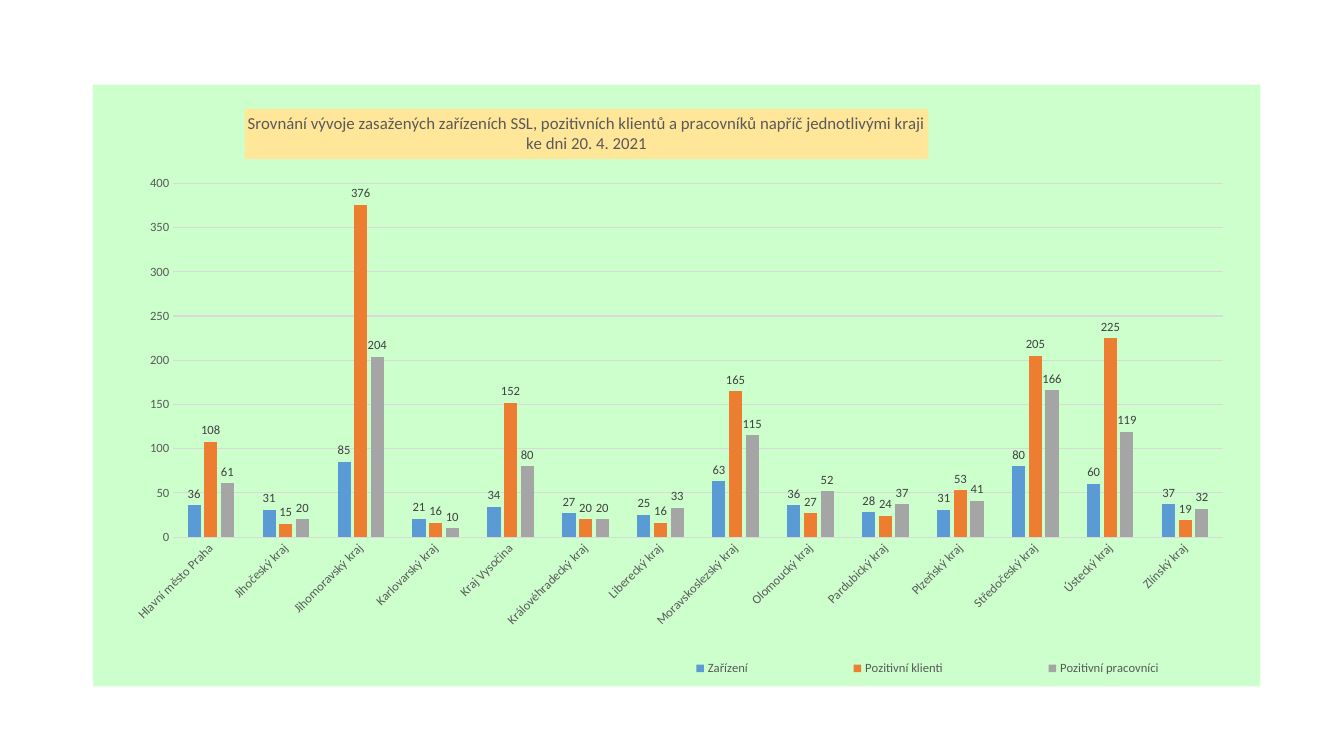
"""Build a slide with a column chart comparing affected care facilities by region."""
from lxml import etree
from pptx import Presentation
from pptx.chart.data import CategoryChartData
from pptx.dml.color import RGBColor
from pptx.enum.chart import (XL_CHART_TYPE, XL_LABEL_POSITION,
                             XL_LEGEND_POSITION, XL_TICK_MARK)
from pptx.enum.text import PP_ALIGN
from pptx.oxml import parse_xml
from pptx.oxml.ns import nsdecls, qn
from pptx.util import Inches, Pt

TITLE_LINES = [
    "Srovnání vývoje zasažených zařízeních SSL, pozitivních klientů a pracovníků napříč jednotlivými kraji",
    "ke dni 20. 4. 2021",
]
REGIONS = [
    ("Hlavní město Praha", 36, 108, 61),
    ("Jihočeský kraj", 31, 15, 20),
    ("Jihomoravský kraj", 85, 376, 204),
    ("Karlovarský kraj", 21, 16, 10),
    ("Kraj Vysočina", 34, 152, 80),
    ("Královéhradecký kraj", 27, 20, 20),
    ("Liberecký kraj", 25, 16, 33),
    ("Moravskoslezský kraj", 63, 165, 115),
    ("Olomoucký kraj", 36, 27, 52),
    ("Pardubický kraj", 28, 24, 37),
    ("Plzeňský kraj", 31, 53, 41),
    ("Středočeský kraj", 80, 205, 166),
    ("Ústecký kraj", 60, 225, 119),
    ("Zlínský kraj", 37, 19, 32),
]
BLUE = RGBColor(0x5B, 0x9B, 0xD5)
ORANGE = RGBColor(0xED, 0x7D, 0x31)
SILVER = RGBColor(0xA5, 0xA5, 0xA5)
MEASURES = [("Zařízení", BLUE), ("Pozitivní klienti", ORANGE),
            ("Pozitivní pracovníci", SILVER)]
BLACK = RGBColor(0, 0, 0)
LABEL_GRAY = RGBColor(0x40, 0x40, 0x40)
TEXT_GRAY = RGBColor(0x59, 0x59, 0x59)
GRID_GRAY = RGBColor(0xD9, 0xD9, 0xD9)
MINT = RGBColor(0xCC, 0xFF, 0xCC)
SAND = RGBColor(0xFF, 0xE6, 0x99)


def style_font(font, size=9, color=TEXT_GRAY):
    font.name = "Calibri"
    font.size = Pt(size)
    font.bold = False
    font.color.rgb = color


def write_line(paragraph, text, align=PP_ALIGN.CENTER, **font_format):
    paragraph.alignment = align
    run = paragraph.add_run()
    run.text = text
    style_font(run.font, **font_format)


def place(part, index, target=None, **fractions):
    for old_layout in part.findall(qn("c:layout")):
        part.remove(old_layout)
    layout = etree.Element(qn("c:layout"))
    manual = etree.SubElement(layout, qn("c:manualLayout"))
    settings = {"layoutTarget": target} if target else {}
    settings |= {"xMode": "edge", "yMode": "edge"} | fractions
    for tag, value in settings.items():
        etree.SubElement(manual, qn(f"c:{tag}")).set("val", str(value))
    part.insert(index, layout)


def style_axis(axis):
    axis.major_tick_mark = axis.minor_tick_mark = XL_TICK_MARK.NONE
    style_font(axis.tick_labels.font)


def style_line(line):
    line.color.rgb = GRID_GRAY
    line.width = Pt(0.75)


def main():
    deck = Presentation()
    deck.slide_width, deck.slide_height = Inches(13.33), Inches(7.5)
    slide = deck.slides.add_slide(deck.slide_layouts[6])

    data = CategoryChartData()
    names, *columns = zip(*REGIONS)
    data.categories = names
    for (measure, _), values in zip(MEASURES, columns):
        data.add_series(measure, values)
    chart = slide.shapes.add_chart(
        XL_CHART_TYPE.COLUMN_CLUSTERED, Inches(0.92), Inches(0.84),
        Inches(11.58), Inches(5.97), data).chart
    style_font(chart.font, size=10, color=BLACK)

    plot = chart.plots[0]
    plot.gap_width, plot.overlap = 219, -27
    plot.vary_by_categories = False
    for series, (_, color) in zip(plot.series, MEASURES):
        series.format.fill.solid()
        series.format.fill.fore_color.rgb = color
        labels = series.data_labels
        labels.show_value = True
        labels.position = XL_LABEL_POSITION.OUTSIDE_END
        style_font(labels.font, color=LABEL_GRAY)

    regions_axis, counts_axis = chart.category_axis, chart.value_axis
    style_axis(regions_axis)
    style_axis(counts_axis)
    style_line(regions_axis.format.line)
    regions_axis._element.find(f"{qn('c:txPr')}/{qn('a:bodyPr')}").set("rot", "-2700000")
    counts_axis.minimum_scale, counts_axis.maximum_scale = 0, 400
    counts_axis.major_unit = 50
    counts_axis.format.line.fill.background()
    counts_axis.has_major_gridlines = True
    style_line(counts_axis.major_gridlines.format.line)

    title = chart.chart_title
    title.format.fill.solid()
    title.format.fill.fore_color.rgb = SAND
    heading = title.text_frame
    write_line(heading.paragraphs[0], TITLE_LINES[0], size=12)
    for line in TITLE_LINES[1:]:
        write_line(heading.add_paragraph(), line, size=12)

    chart.has_legend = True
    chart.legend.position = XL_LEGEND_POSITION.RIGHT
    chart.legend.include_in_layout = False
    style_font(chart.legend.font)

    body = chart._chartSpace.find(qn("c:chart"))
    place(body.find(qn("c:title")), 1, x=0.13, y=0.04)
    place(body.find(qn("c:plotArea")), 0, target="inner",
          x=0.069, y=0.164, w=0.899, h=0.588)
    place(body.find(qn("c:legend")), 1, x=0.43, y=0.95, w=0.57, h=0.04)
    body.addnext(parse_xml(
        f'<c:spPr {nsdecls("c", "a")}><a:solidFill><a:srgbClr val="{MINT}"/>'
        '</a:solidFill><a:ln><a:noFill/></a:ln></c:spPr>'))

    deck.save("out.pptx")


if __name__ == "__main__":
    main()
